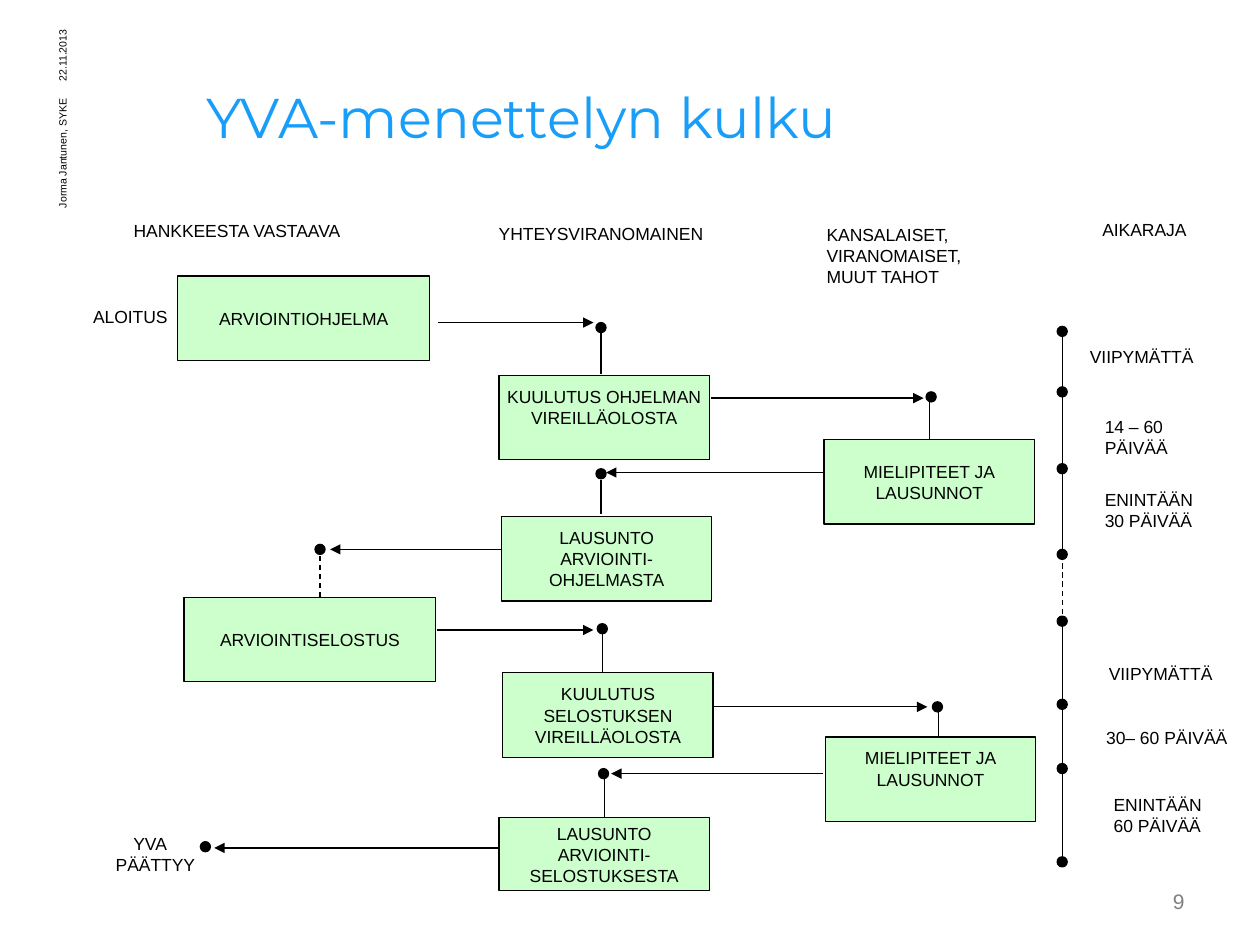
from pptx import Presentation
from pptx.dml.color import RGBColor
from pptx.enum.dml import MSO_LINE
from pptx.enum.shapes import MSO_CONNECTOR, MSO_SHAPE
from pptx.enum.text import MSO_ANCHOR, PP_ALIGN
from pptx.oxml.ns import qn
from pptx.util import Inches, Pt
from lxml.etree import SubElement

COLORS = {"ink": "000000", "box": "CCFFCC", "title": "189DF8", "page": "808080"}
DOT = 0.08
TIME_X = 8.43

# name: left, top, width, height, lines, bottom inset
STEPS = {
    "program": (1.41, 2.19, 2, 0.67, ["ARVIOINTIOHJELMA"], 0.05),
    "report": (1.46, 4.74, 2, 0.67, ["ARVIOINTISELOSTUS"], 0.05),
    "notice 2": (3.99, 5.34, 1.67, 0.67,
                 ["KUULUTUS", "SELOSTUKSEN", "VIREILLÄOLOSTA"], 0.05),
    "statement 1": (3.98, 4.1, 1.67, 0.67,
                    ["LAUSUNTO", "ARVIOINTI-", "OHJELMASTA"], 0.05),
    "notice 1": (3.96, 2.98, 1.67, 0.67,
                 ["KUULUTUS OHJELMAN", "VIREILLÄOLOSTA"], 0.22),
    "statement 2": (3.96, 6.49, 1.67, 0.58,
                    ["LAUSUNTO", "ARVIOINTI-", "SELOSTUKSESTA"], 0.05),
    "opinions 1": (6.54, 3.49, 1.67, 0.67, ["MIELIPITEET JA", "LAUSUNNOT"], 0.05),
    "opinions 2": (6.55, 5.85, 1.67, 0.67, ["MIELIPITEET JA", "LAUSUNNOT"], 0.22),
}

# left, top, width, height, lines, left inset
LABELS = [
    (0.34, 1.7, 2.52, 0.27, ["HANKKEESTA VASTAAVA"], 0.72),
    (0.64, 2.38, 1.04, 0.27, ["ALOITUS"], 0.1),
    (3.86, 1.72, 1.83, 0.27, ["YHTEYSVIRANOMAINEN"], 0.1),
    (6.37, 1.73, 1.36, 0.6, ["KANSALAISET,", "VIRANOMAISET,", "MUUT TAHOT"], 0.19),
    (8.65, 1.69, 0.87, 0.27, ["AIKARAJA"], 0.1),
    (8.52, 2.7, 1.47, 0.27, ["VIIPYMÄTTÄ"], 0.13),
    (8.67, 3.25, 1.2, 0.43, ["14 – 60\vPÄIVÄÄ"], 0.1),
    (8.67, 3.83, 0.94, 0.43, ["ENINTÄÄN", "30 PÄIVÄÄ"], 0.1),
    (8.67, 5.21, 1.06, 0.27, ["VIIPYMÄTTÄ"], 0.13),
    (8.68, 5.72, 1.18, 0.27, ["30– 60 PÄIVÄÄ"], 0.1),
    (8.74, 6.25, 0.9, 0.43, ["ENINTÄÄN", "60 PÄIVÄÄ"], 0.1),
]

# start x, end x, y
ARROWS = [
    (3.48, 4.71, 2.56), (5.64, 7.33, 3.16), (6.53, 4.81, 3.75),
    (3.98, 2.62, 4.36), (3.47, 4.71, 5), (5.65, 7.36, 5.61),
    (6.53, 4.85, 6.14), (3.95, 1.7, 6.73),
]

# x, foot y, head y, dashed, step whose top it joins
STEMS = [
    (4.77, 2.97, 2.63, False, None), (7.38, 3.49, 3.19, False, "opinions 1"),
    (4.77, 4.08, 3.81, False, None), (2.54, 4.74, 4.4, True, None),
    (4.78, 5.34, 5.01, False, None), (7.45, 5.85, 5.6, False, None),
    (4.79, 6.49, 6.15, False, "statement 2"),
]

# centres of the dots where the arrows land
ENDS = [
    (4.77, 2.6), (7.39, 3.15), (4.77, 3.76), (2.54, 4.36),
    (4.78, 4.99), (7.44, 5.61), (4.79, 6.14), (1.63, 6.72),
]
TIMES = [2.63, 3.11, 3.72, 4.4, 4.93, 5.59, 6.1, 6.84]


def tint(name):
    return RGBColor.from_string(COLORS[name])


def write(frame, lines, size=10, color="ink", font="Arial", align=PP_ALIGN.LEFT):
    frame.text = "\n".join(lines)
    for para in frame.paragraphs:
        para.alignment = align
        para.font.size = Pt(size)
        para.font.name = font
        para.font.color.rgb = tint(color)


def add_text(slide, place, lines, inset=None, turn=0, anchor=MSO_ANCHOR.TOP, **style):
    """Add a text box; inset is the left one only."""
    box = slide.shapes.add_textbox(*map(Inches, place))
    box.rotation = turn
    frame = box.text_frame
    frame.word_wrap = True
    frame.vertical_anchor = anchor
    if inset is not None:
        frame.margin_left = Inches(inset)
    write(frame, lines, **style)
    return frame


def add_side(slide, place, text):
    """Add small text that reads upwards along the left edge."""
    frame = add_text(slide, place, [text], inset=0, turn=270,
                     size=6, align=PP_ALIGN.RIGHT)
    frame.margin_top = frame.margin_right = frame.margin_bottom = 0


def add_solid(slide, kind, place, fill):
    shape = slide.shapes.add_shape(kind, *map(Inches, place))
    shape.shadow.inherit = False
    shape.fill.solid()
    shape.fill.fore_color.rgb = tint(fill)
    shape.line.color.rgb = tint("ink")
    shape.line.width = Pt(0.75)
    return shape


def add_step(slide, left, top, width, height, lines, foot):
    box = add_solid(slide, MSO_SHAPE.RECTANGLE, (left, top, width, height), "box")
    frame = box.text_frame
    frame.word_wrap = False
    frame.vertical_anchor = MSO_ANCHOR.MIDDLE
    frame.margin_bottom = Inches(foot)
    write(frame, lines, align=PP_ALIGN.CENTER)
    return box


def add_dot(slide, x, y):
    place = (x - DOT / 2, y - DOT / 2, DOT, DOT)
    add_solid(slide, MSO_SHAPE.FLOWCHART_CONNECTOR, place, "ink")


def add_line(slide, x1, y1, x2, y2, dash=False, arrow=False):
    line = slide.shapes.add_connector(
        MSO_CONNECTOR.STRAIGHT, *map(Inches, (x1, y1, x2, y2)))
    line.line.color.rgb = tint("ink")
    line.line.width = Pt(0.75)
    if dash:
        line.line.dash_style = MSO_LINE.DASH
    if arrow:
        SubElement(line.line._get_or_add_ln(), qn("a:tailEnd"), type="triangle")
    SubElement(line._element.spPr, qn("a:effectLst"))
    return line


def add_flow(slide):
    steps = {name: add_step(slide, *step) for name, step in STEPS.items()}
    for x, foot, head, dash, name in STEMS:
        stem = add_line(slide, x, foot, x, head, dash=dash)
        if name:
            stem.begin_connect(steps[name], 0)
            stem.end_x = stem.begin_x
    for x1, x2, y in ARROWS:
        add_line(slide, x1, y, x2, y, arrow=True)
    for x, y in ENDS:
        add_dot(slide, x, y)


def add_times(slide):
    for first, last, dash in ((0, 3, False), (3, 4, True), (4, 7, False)):
        add_line(slide, TIME_X, TIMES[first], TIME_X, TIMES[last], dash=dash)
    for y in TIMES:
        add_dot(slide, TIME_X, y)


def main():
    deck = Presentation()
    deck.slide_width, deck.slide_height = Inches(10), Inches(7.5)
    slide = deck.slides.add_slide(deck.slide_layouts[6])
    add_text(slide, (1.54, 0.3, 7.96, 1.25), ["YVA-menettelyn kulku"],
             anchor=MSO_ANCHOR.MIDDLE, size=32, color="title", font="Montserrat")
    for *place, lines, inset in LABELS:
        add_text(slide, place, lines, inset)
    finish = add_text(slide, (0.82, 6.56, 1.1, 0.43), ["YVA PÄÄTTYY"])
    finish.paragraphs[0]._p.get_or_add_pPr().set("indent", str(Inches(0.14)))
    add_flow(slide)
    add_times(slide)
    add_side(slide, (0.29, 0.39, 0.47, 0.16), "22.11.2013")
    add_side(slide, (-0.89, 2.12, 2.83, 0.16), "Jorma Jantunen, SYKE")
    add_text(slide, (8.86, 6.95, 0.64, 0.4), ["9"], anchor=MSO_ANCHOR.MIDDLE,
             size=12, color="page", align=PP_ALIGN.RIGHT)
    deck.save("out.pptx")


if __name__ == "__main__":
    main()
